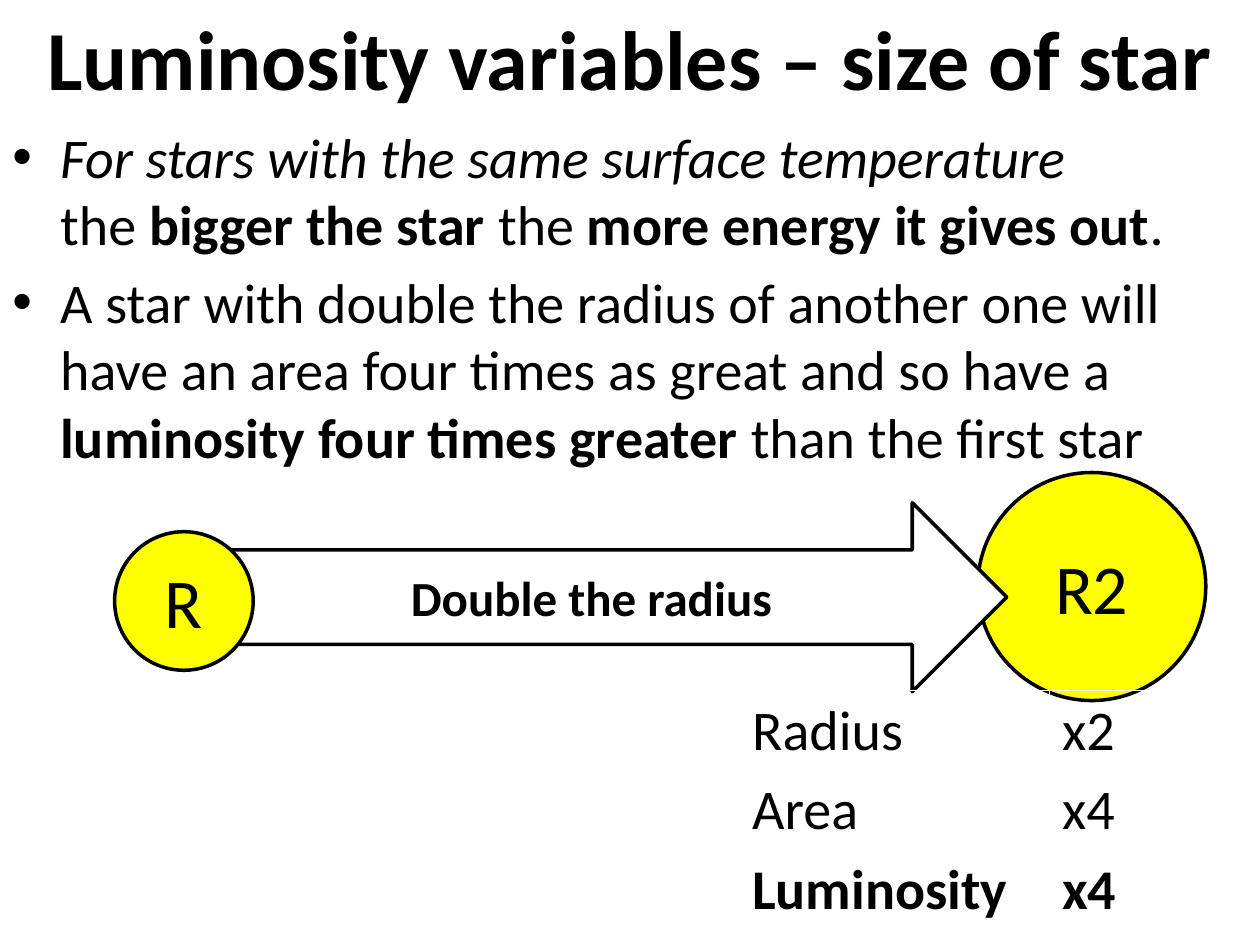
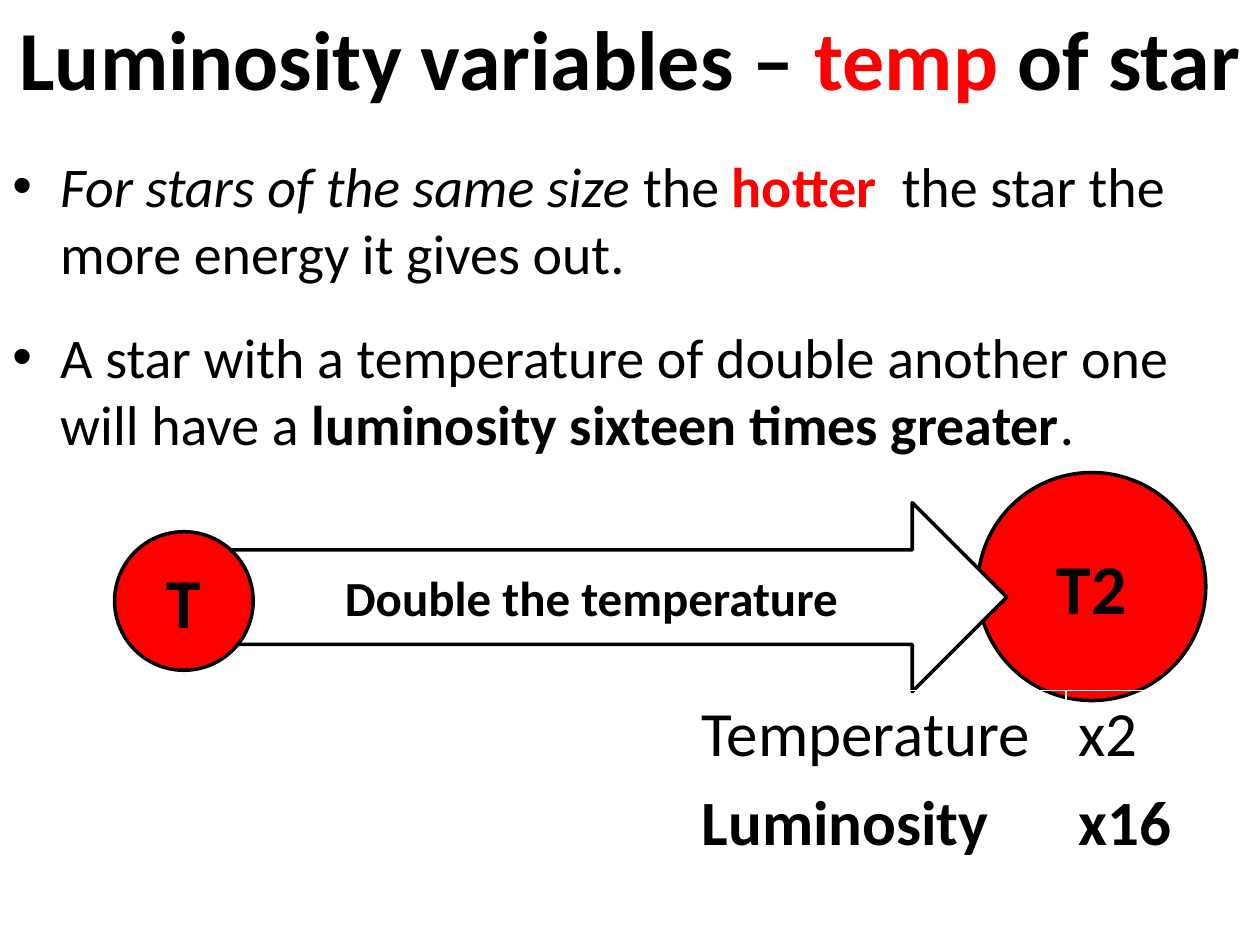
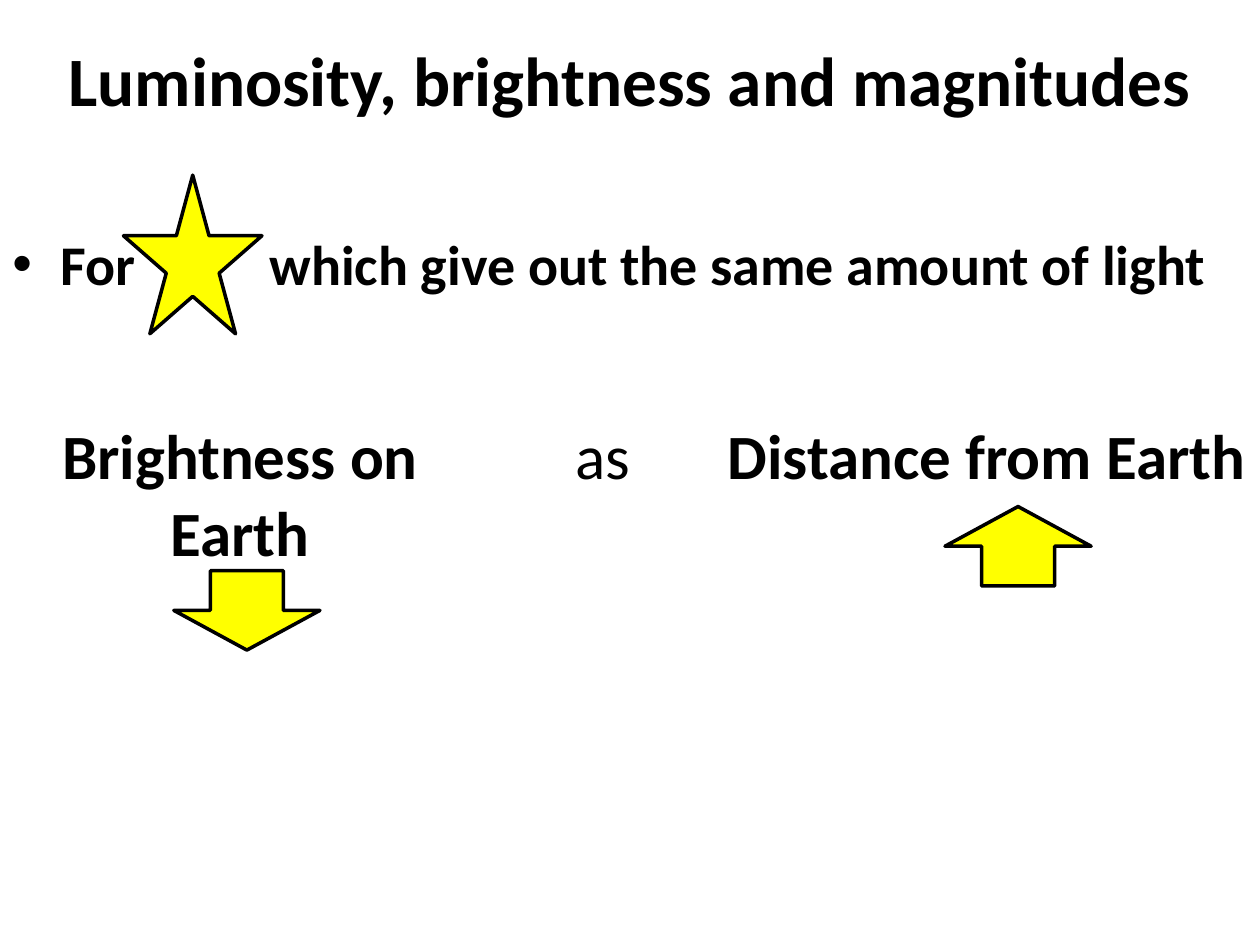
from dataclasses import dataclass

from lxml.etree import SubElement
from pptx import Presentation
from pptx.dml.color import RGBColor
from pptx.enum.shapes import MSO_SHAPE
from pptx.enum.text import MSO_ANCHOR, PP_ALIGN
from pptx.oxml.ns import qn
from pptx.util import Inches, Pt


@dataclass(frozen=True)
class Theme:
    font: str = "Calibri"
    black: RGBColor = RGBColor(0, 0, 0)
    white: RGBColor = RGBColor(255, 255, 255)
    yellow: RGBColor = RGBColor(255, 255, 0)
    red: RGBColor = RGBColor(255, 0, 0)
    title: float = 48
    long_title: float = 39.6
    star_label: float = 40
    table: float = 36
    body: float = 32
    arrow_label: float = 28
    outline: float = 2
    bullet_gap: float = 6.4
    wide_bullet_gap: float = 21


THEME = Theme()
BREAK = ("\n", "")

# Content: text is a list of (words, style); style letters are b bold, i italic, r red
VARIABLES = [
    {
        "title": [("Luminosity variables – size of star", "b")],
        "body_top": 0.92,
        "gap": THEME.bullet_gap,
        "bullets": [
            [("For stars with the same surface temperature", "i"), BREAK,
             ("the ", ""), ("bigger the star ", "b"), ("the ", ""),
             ("more energy it gives out", "b"), (".", "")],
            [("A star with double the radius of another one will have an area "
              "four times as great and so have a ", ""),
             ("luminosity four times greater ", "b"), ("than the first star", "")],
        ],
        "stars": ("R", "R2"), "star_style": "", "star_color": THEME.yellow,
        "change": "Double the radius",
        "effects": [[("Radius", ""), ("x2", "")],
                    [("Area", ""), ("x4", "")],
                    [("Luminosity", "b"), ("x4", "b")]],
        "columns": (2.46, 1.68), "effects_left": 5.87, "row_height": 0.63,
        "effects_size": THEME.body,
    },
    {
        "title": [("Luminosity variables – ", "b"), ("temp", "br"), (" of star", "b")],
        "body_top": 1.15,
        "gap": THEME.wide_bullet_gap,
        "bullets": [
            [("For stars of the same size", "i"), (" the ", ""), ("hotter", "br"),
             ("  the star the more energy it gives out.", "")],
            [("A star with a temperature of double another one will have a ", ""),
             ("luminosity sixteen times greater", "b"), (".", "")],
        ],
        "stars": ("T", "T2"), "star_style": "b", "star_color": THEME.red,
        "change": "Double the temperature",
        "effects": [[("Temperature", ""), ("x2", "")],
                    [("Luminosity", "b"), ("x16", "b")]],
        "columns": (2.99, 1.54), "effects_left": 5.47, "row_height": 0.7,
        "effects_size": THEME.table,
    },
]

BRIGHTNESS = {
    "title": [("Luminosity, brightness and magnitudes", "b")],
    "before_star": [("For", "b")],
    "after_star": [("which give out the same amount of light", "b")],
    "relation": [[("Brightness on Earth", "b"), ("as", ""), ("Distance from Earth", "b")]],
    "columns": (4.01, 1.75, 4.34),
    # left, top, rotation
    "trends": [(1.38, 4.53, 0), (7.5, 4.02, 180)],
}


# Text
def write(paragraph, pieces, size, align=PP_ALIGN.LEFT):
    paragraph.alignment = align
    for words, style in pieces:
        if words == "\n":
            paragraph.add_line_break()
            continue
        run = paragraph.add_run()
        run.text = words
        font = run.font
        font.name, font.size = THEME.font, Pt(size)
        font.bold, font.italic = "b" in style, "i" in style
        font.color.rgb = THEME.red if "r" in style else THEME.black


def text_frame(slide, left, top, width, height):
    box = slide.shapes.add_textbox(*map(Inches, (left, top, width, height)))
    box.text_frame.word_wrap = True
    return box.text_frame


def add_title(slide, pieces, size=THEME.title, anchor=MSO_ANCHOR.TOP):
    frame = text_frame(slide, 0, 0, 10, 1.25)
    frame.vertical_anchor = anchor
    write(frame.paragraphs[0], pieces, size, PP_ALIGN.CENTER)


def add_bullets(slide, bullets, top, width=10, gap=THEME.bullet_gap):
    frame = text_frame(slide, 0, top, width, 3.39)
    for index, pieces in enumerate(bullets):
        paragraph = frame.add_paragraph() if index else frame.paragraphs[0]
        paragraph.space_before = Pt(gap if index else THEME.bullet_gap)
        write(paragraph, pieces, THEME.body)
        properties = paragraph._p.get_or_add_pPr()
        properties.set("marL", str(Inches(0.38)))
        properties.set("indent", str(-Inches(0.38)))
        SubElement(properties, qn("a:buFont")).set("typeface", "Arial")
        SubElement(properties, qn("a:buChar")).set("char", "•")


# Shapes and tables
def add_outlined(slide, kind, box, fill, pieces=(), size=THEME.star_label):
    shape = slide.shapes.add_shape(kind, *map(Inches, box))
    shape.shadow.inherit = False
    shape.fill.solid()
    shape.fill.fore_color.rgb = fill
    shape.line.color.rgb = THEME.black
    shape.line.width = Pt(THEME.outline)
    shape.text_frame.vertical_anchor = MSO_ANCHOR.MIDDLE
    write(shape.text_frame.paragraphs[0], pieces, size, PP_ALIGN.CENTER)
    return shape


def add_plain_table(slide, rows, columns, left, top, row_height, size, align=PP_ALIGN.LEFT):
    table = slide.shapes.add_table(
        len(rows), len(columns), Inches(left), Inches(top),
        Inches(sum(columns)), Inches(row_height * len(rows))).table
    table.first_row = table.horz_banding = False
    for column, width in zip(table.columns, columns):
        column.width = Inches(width)
    for r, row in enumerate(rows):
        for c, piece in enumerate(row):
            cell = table.cell(r, c)
            cell.fill.background()
            write(cell.text_frame.paragraphs[0], [piece], size, align)


# Slides
def build_variable(slide, content):
    small_star, big_star = content["stars"]
    style, color = content["star_style"], content["star_color"]
    add_outlined(slide, MSO_SHAPE.OVAL, (7.76, 3.75, 1.81, 1.81), color, [(big_star, style)])
    add_outlined(slide, MSO_SHAPE.RIGHT_ARROW, (1.77, 3.99, 6.22, 1.5), THEME.white,
                 [(content["change"], "b")], THEME.arrow_label)
    add_title(slide, content["title"])
    add_bullets(slide, content["bullets"], content["body_top"], gap=content["gap"])
    add_outlined(slide, MSO_SHAPE.OVAL, (0.91, 4.22, 1.1, 1.1), color, [(small_star, style)])
    add_plain_table(slide, content["effects"], content["columns"], content["effects_left"],
                    5.48, content["row_height"], content["effects_size"])


def build_brightness(slide, content):
    add_title(slide, content["title"], THEME.long_title, MSO_ANCHOR.MIDDLE)

    # Sentence with a star standing in for a word
    sentence_top = 1.77
    add_bullets(slide, [content["before_star"]], sentence_top, width=1.4)
    ending = text_frame(slide, 2.04, sentence_top, 7.96, 0.72).paragraphs[0]
    ending.space_before = Pt(THEME.bullet_gap)
    write(ending, content["after_star"], THEME.body)
    add_outlined(slide, MSO_SHAPE.STAR_5_POINT, (0.98, 1.39, 1.1, 1.26), THEME.yellow)

    # Brightness falls as distance rises
    add_plain_table(slide, content["relation"], content["columns"], -0.1, 3.28, 1.3,
                    THEME.table, PP_ALIGN.CENTER)
    for left, top, rotation in content["trends"]:
        trend = add_outlined(slide, MSO_SHAPE.DOWN_ARROW, (left, top, 1.16, 0.63), THEME.yellow)
        trend.rotation = rotation


def main():
    deck = Presentation()
    deck.slide_width, deck.slide_height = Inches(10), Inches(7.5)
    blank = deck.slide_layouts[6]
    for content in VARIABLES:
        build_variable(deck.slides.add_slide(blank), content)
    build_brightness(deck.slides.add_slide(blank), BRIGHTNESS)
    deck.save("out.pptx")


if __name__ == "__main__":
    main()
